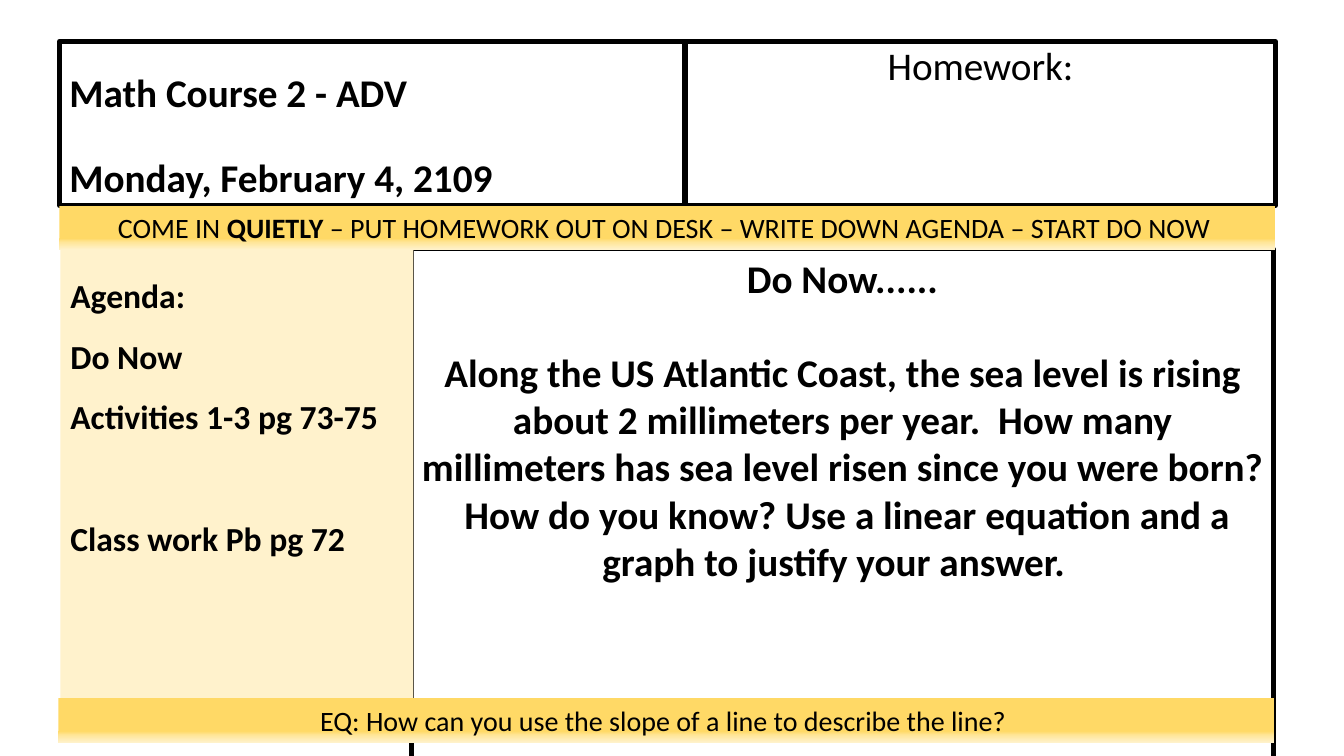
import copy

import pptx
import pptx.dml.color
import pptx.enum.shapes
import pptx.enum.text
import pptx.oxml.ns
import pptx.util

Inches = pptx.util.Inches
Pt = pptx.util.Pt
RGBColor = pptx.dml.color.RGBColor
Align = pptx.enum.text.PP_ALIGN
Anchor = pptx.enum.text.MSO_ANCHOR

BLACK = RGBColor(0x00, 0x00, 0x00)
CREAM = RGBColor(0xFF, 0xF2, 0xCC)
GOLD = RGBColor(0xFF, 0xD9, 0x66)
PALE_GOLD = RGBColor(0xFF, 0xE6, 0x99)
BANNER_STOPS = [(0, GOLD), (0.74, GOLD), (0.83, PALE_GOLD), (1, CREAM)]


class AgendaPage:
    """Style and drawing methods for one class agenda slide."""

    font = "Calibri"
    border = Pt(3.25)

    def __init__(self, deck):
        self.page = deck.slides.add_slide(deck.slide_layouts[6])

    def box(self, left, top, width, height, anchor=Anchor.TOP):
        """Add a plain rectangle without fill or line."""
        box = self.page.shapes.add_shape(
            pptx.enum.shapes.MSO_SHAPE.RECTANGLE,
            Inches(left), Inches(top), Inches(width), Inches(height))
        box.shadow.inherit = False
        box.fill.background()
        box.line.fill.background()
        box.text_frame.word_wrap = True
        box.text_frame.vertical_anchor = anchor
        return box

    def framed(self, *place, **options):
        """Add a rectangle with a heavy black border."""
        box = self.box(*place, **options)
        box.line.color.rgb = BLACK
        box.line.width = self.border
        return box

    def panel(self, *place, color):
        """Add a rectangle with a flat fill."""
        box = self.box(*place)
        box.fill.solid()
        box.fill.fore_color.rgb = color
        return box

    def banner(self, left, top, spans):
        """Add a full-width gold bar that fades towards its lower edge."""
        box = self.box(left, top, 12.06, 0.44)
        box.fill.gradient()
        box.fill.gradient_angle = 270
        first = next(box._element.spPr.iter(pptx.oxml.ns.qn("a:gs")))
        for _ in range(len(BANNER_STOPS) - 2):
            first.addnext(copy.deepcopy(first))
        for stop, (position, color) in zip(box.fill.gradient_stops, BANNER_STOPS):
            stop.position = position
            stop.color.rgb = color
        self.add_text(box, [spans], 20, alignment=Align.CENTER)

    def add_text(self, box, lines, size, gaps=None, **formats):
        """Fill a box; each line is a list of (text, bold) spans."""
        formats = {"alignment": Align.LEFT, **formats}
        frame = box.text_frame
        for index, spans in enumerate(lines):
            para = frame.add_paragraph() if index else frame.paragraphs[0]
            for name, value in formats.items():
                setattr(para, name, value)
            if gaps and index in gaps:
                para.space_before = Pt(gaps[index])
            for text, bold in spans:
                span = para.add_run()
                span.text = text
                span.font.color.rgb = BLACK
                style = {"name": self.font, "size": Pt(size), "bold": bold}
                for name, value in style.items():
                    setattr(span.font, name, value)


def main():
    deck = pptx.Presentation()
    deck.slide_width, deck.slide_height = Inches(13.33), Inches(7.5)
    agenda_page = AgendaPage(deck)

    # Header: course and date, homework
    course = agenda_page.framed(0.59, 0.41, 6.2, 1.63, anchor=Anchor.BOTTOM)
    agenda_page.add_text(
        course,
        [[("Math Course 2 - ADV", True)], [("Monday, February 4, 2109", True)]],
        28, gaps={1: 30.5}, line_spacing=0.9)
    homework = agenda_page.framed(6.8, 0.41, 5.85, 1.63)
    agenda_page.add_text(homework, [[("Homework:", False)]], 28, gaps={0: 10},
                         alignment=Align.CENTER, line_spacing=0.9)

    # Warm-up problem, running past the lower edge of the page
    do_now = agenda_page.framed(4.08, 2.47, 8.55, 8.11)
    problem = (
        "Along the US Atlantic Coast, the sea level is rising about "
        "2 millimeters per year.  How many millimeters has sea level risen "
        "since you were born?  How do you know? Use a linear equation and "
        "a graph to justify your answer.  ")
    agenda_page.add_text(do_now, [[("Do Now......", True)], [(problem, True)]],
                         28, gaps={1: 34}, alignment=Align.CENTER)

    # Entry instructions
    agenda_page.banner(0.59, 2.04, [
        ("COME IN ", False), ("QUIETLY", True),
        (" – PUT HOMEWORK OUT ON DESK – WRITE DOWN AGENDA – START DO NOW ", False)])

    # Agenda
    agenda = agenda_page.panel(0.6, 2.48, 3.5, 4.89, color=CREAM)
    steps = ["Agenda:", "Do Now", "Activities 1-3 pg 73-75", "Class work Pb pg 72"]
    agenda_page.add_text(agenda, [[(step, True)] for step in steps], 24,
                         gaps={3: 43.5}, line_spacing=1.5)

    # Essential question
    agenda_page.banner(0.58, 6.93, [
        ("EQ: How can you use the slope of a line to describe the line? ", False)])

    deck.save("out.pptx")


if __name__ == "__main__":
    main()
